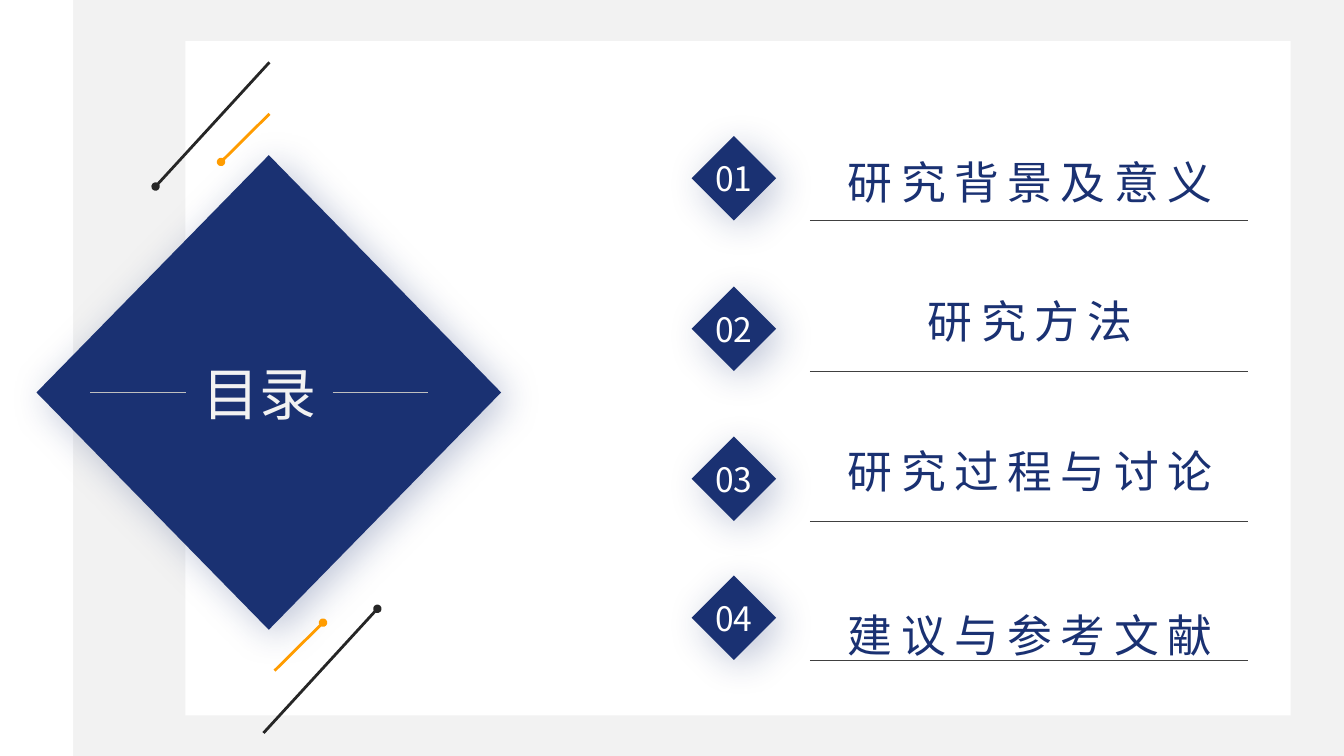
from dataclasses import dataclass

import lxml.etree
import pptx
import pptx.dml.color
import pptx.enum.shapes
import pptx.enum.text
import pptx.oxml.ns
import pptx.util

Cm = pptx.util.Cm
Pt = pptx.util.Pt
Shape = pptx.enum.shapes.MSO_SHAPE
Anchor = pptx.enum.text.MSO_ANCHOR
qn = pptx.oxml.ns.qn


@dataclass(frozen=True)
class Theme:
    navy: str = "1A3172"
    white: str = "FFFFFF"
    mist: str = "F2F2F2"
    rule: str = "404040"
    dash: str = "BFBFBF"
    ink: str = "262626"
    orange: str = "FF9C00"
    font: str = "Noto Sans CJK JP"
    title_font: str = "Arial"
    title_size: float = 40.7
    label_size: float = 32
    number_size: float = 24
    label_tracking: int = 6
    hairline: float = 0.5
    stroke: float = 2


THEME = Theme()


@dataclass(frozen=True)
class Box:
    left: float
    top: float
    width: float
    height: float

    def lengths(self):
        return Cm(self.left), Cm(self.top), Cm(self.width), Cm(self.height)


def rgb(color):
    return pptx.dml.color.RGBColor.from_string(color)


def add_block(page, kind, box, color):
    block = page.shapes.add_shape(kind, *box.lengths())
    block.shadow.inherit = False
    block.fill.solid()
    block.fill.fore_color.rgb = rgb(color)
    block.line.fill.background()
    return block


def add_diamond(page, box):
    diamond = add_block(page, Shape.DIAMOND, box, THEME.navy)
    effects = diamond.element.spPr.find(qn("a:effectLst"))
    shadow = lxml.etree.SubElement(
        effects, qn("a:outerShdw"), blurRad=str(Pt(28)), dist=str(Pt(7)),
        dir=str(45 * 60000), algn="tl", rotWithShape="0")
    tint = lxml.etree.SubElement(shadow, qn("a:srgbClr"), val=THEME.navy)
    lxml.etree.SubElement(tint, qn("a:alpha"), val="27000")
    return diamond


def add_line(page, start, end, color, width, dot=None):
    line = page.shapes.add_connector(
        pptx.enum.shapes.MSO_CONNECTOR.STRAIGHT,
        *(Cm(value) for value in (*start, *end)))
    line.line.color.rgb = rgb(color)
    line.line.width = Pt(width)
    if dot:
        lxml.etree.SubElement(line.line._get_or_add_ln(), qn(dot), type="oval")
    lxml.etree.SubElement(line.element.spPr, qn("a:effectLst"))


def write(shape, text, font, size, color, anchor, tracking=0, spacing=1.0):
    frame = shape.text_frame
    frame.text = text
    frame.word_wrap = False
    frame.auto_size = pptx.enum.text.MSO_AUTO_SIZE.NONE
    frame.vertical_anchor = anchor
    para = frame.paragraphs[0]
    para.alignment = pptx.enum.text.PP_ALIGN.CENTER
    para.line_spacing = spacing
    span = para.runs[0]
    span.font.name = font
    span.font.size = Pt(size)
    span.font.color.rgb = rgb(color)
    properties = span.font._element
    lxml.etree.SubElement(properties, qn("a:ea"), typeface=THEME.font)
    if tracking:
        properties.set("spc", str(tracking * 100))


def draw_backdrop(page, box):
    strip = 1.85
    add_block(page, Shape.RECTANGLE,
              Box(box.left, box.top, strip, box.height), THEME.white)
    add_block(page, Shape.RECTANGLE,
              Box(box.left + strip, box.top, box.width - strip, box.height), THEME.mist)
    add_block(page, Shape.RECTANGLE,
              Box(box.left + 4.67, box.top + 1.04, 27.86, 16.99), THEME.white)


def draw_entry(page, box, number, text, label_shift, spacing):
    diamond = add_diamond(page, Box(box.left, box.top, box.height, box.height))
    write(diamond, number, THEME.font, THEME.number_size, THEME.white, Anchor.MIDDLE)
    label_box = Box(box.left + 2.8, box.top + label_shift, 11.46, 2.08)
    label = page.shapes.add_textbox(*label_box.lengths())
    write(label, text, THEME.font, THEME.label_size, THEME.navy, Anchor.TOP,
          THEME.label_tracking, spacing)
    bottom = box.top + box.height
    add_line(page, (box.left + 2.98, bottom), (box.left + box.width, bottom),
             THEME.rule, THEME.hairline)


def draw_contents(page, box):
    entries = [
        (0, "研究背景及意义", -0.33, 1.5),
        (3.79, "研究方法", 0.05, 1.0),
        (7.57, "研究过程与讨论", 0.05, 1.0),
        (11.07, "建议与参考文献", 0, 1.5),
    ]
    for index, (offset, text, label_shift, spacing) in enumerate(entries, 1):
        entry_box = Box(box.left, box.top + offset, box.width, 2.13)
        draw_entry(page, entry_box, f"{index:02}", text, label_shift, spacing)


def draw_title(page, box):
    add_diamond(page, box)
    center = box.left + 5.61
    middle = box.top + box.height / 2
    title = page.shapes.title
    title.left, title.top, title.width, title.height = Box(
        center - 1.85, middle - 0.9, 3.7, 1.8).lengths()
    write(title, "目录", THEME.title_font, THEME.title_size, THEME.mist, Anchor.MIDDLE)
    page.shapes.element.append(title.element)
    for side in (-1, 1):
        add_line(page, (center + side * 1.85, middle), (center + side * 4.26, middle),
                 THEME.dash, THEME.hairline)


def draw_strokes(page, box):
    strokes = [
        (5.87, -2.34, -2.87, 3.13, THEME.ink, "a:tailEnd"),
        (5.87, -1.04, -1.22, 1.21, THEME.orange, "a:tailEnd"),
        (8.59, 11.43, -2.87, 3.13, THEME.ink, "a:headEnd"),
        (7.22, 11.78, -1.22, 1.21, THEME.orange, "a:headEnd"),
    ]
    for across, down, run, fall, color, dot in strokes:
        x, y = box.left + across, box.top + down
        add_line(page, (x, y), (x + run, y + fall), color, THEME.stroke, dot)


def main():
    deck = pptx.Presentation()
    deck.slide_width, deck.slide_height = Cm(33.87), Cm(19.05)
    page = deck.slides.add_slide(deck.slide_layouts.get_by_name("Title Only"))
    page.background.fill.solid()
    page.background.fill.fore_color.rgb = rgb(THEME.mist)
    title_box = Box(0.92, 3.91, 11.71, 11.96)
    draw_backdrop(page, Box(0, 0, 33.87, 19.05))
    draw_contents(page, Box(17.43, 3.43, 14.02, 13.2))
    draw_title(page, title_box)
    draw_strokes(page, title_box)
    deck.save("out.pptx")


if __name__ == "__main__":
    main()
